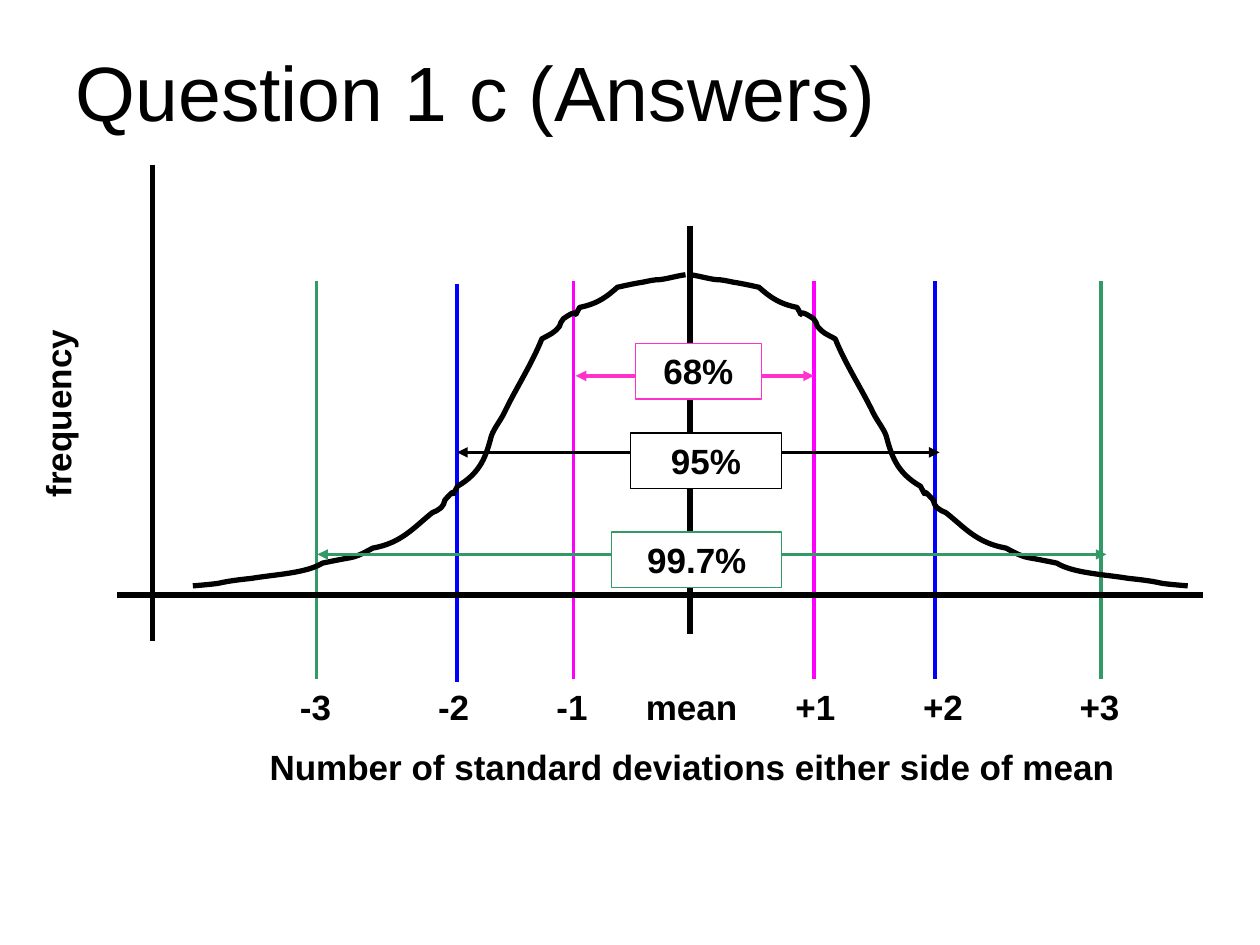
from itertools import chain

from lxml import etree
from pptx import Presentation
from pptx.dml.color import RGBColor
from pptx.enum import shapes, text
from pptx.oxml import ns
from pptx.util import Pt

COLORS = {"black": "000000", "white": "FFFFFF", "green": "339966",
          "blue": "0000FF", "magenta": "FF00FF", "pink": "FF33CC"}

# (x, top, bottom, colour) of the standard deviation markers
MARKERS = [(181, 160.6, 388, "green"), (327.6, 160.6, 388, "magenta"),
           (261.2, 162, 390, "blue"), (465.2, 160.6, 388, "magenta"),
           (534.2, 160.6, 388, "blue"), (629.3, 160.6, 388, "green")]

# (start, end, y, colour) of each arrow, then (text, box left, top, width)
RANGES = [((181.4, 632.2, 316.8, "green"), ("99.7%", 349.6, 304.1, 97.2)),
          ((329, 465.1, 214.8, "pink"), ("68%", 363.1, 196.4, 72)),
          ((261.2, 536.9, 258.5, "black"), ("95%", 360.2, 247.5, 86.4))]

TICKS = [("-3", 180.4), ("-2", 259.3), ("-1", 327), ("mean", 395.3),
         ("+1", 466), ("+2", 539), ("+3", 628.4)]

# Half bell: Bezier points as (distance from the mean, y)
BELL_START = (0, 157)
BELL_CURVES = [
    ((5, 157.7), (9.4, 159.1), (14.4, 159.8)),
    ((18, 159.8), (20.9, 160.6), (24.5, 161.3)),
    ((29.5, 162), (38.9, 164.2), (38.9, 164.2)),
    ((44.6, 169.2), (49.7, 173.5), (60.5, 175.7)),
    ((66.2, 185.8), (57.6, 173.5), (69.8, 182.2)),
    ((71.3, 183.6), (71.3, 185), (72, 186.5)),
    ((75.6, 190.8), (77, 190.8), (82.1, 193.7)),
    ((87.8, 208.1), (97.2, 222.5), (103.7, 236.2)),
    ((105.8, 240.5), (109.4, 244.8), (110.9, 249.1)),
    ((113.8, 259.9), (116.6, 270), (130.3, 277.9)),
    ((136.1, 288.7), (128.2, 275), (137.5, 285.8)),
    ((138.2, 287.3), (138.2, 289.4), (139.7, 290.2)),
    ((141.1, 291.6), (143.3, 292.3), (144.7, 293)),
    ((154.8, 301), (162, 310.3), (178.6, 313.2)),
    ((182.9, 315.4), (187.2, 318.2), (193, 319)),
    ((197.3, 319.7), (207.4, 321.8), (207.4, 321.8)),
    ((216.7, 327.6), (234.7, 328.3), (247.7, 330.5)),
    ((254.2, 331.2), (260.6, 331.9), (267.1, 333.4)),
    ((272.2, 334.1), (281.5, 334.8), (281.5, 334.8)),
]


def rgb(color):
    return RGBColor.from_string(COLORS[color])


def format_font(paragraph, size=20, bold=True):
    font = paragraph.font
    font.name, font.size, font.bold = "Arial", Pt(size), bold
    font.color.rgb = rgb("black")


def add_line(slide, start, end, color, width, arrows=False):
    line = slide.shapes.add_connector(shapes.MSO_CONNECTOR.STRAIGHT,
                                      *map(Pt, start + end))
    line.line.color.rgb = rgb(color)
    line.line.width = Pt(width)
    properties = line._element.spPr
    if arrows:
        outline = properties.find(ns.qn("a:ln"))
        for tag in ("a:headEnd", "a:tailEnd"):
            etree.SubElement(outline, ns.qn(tag), type="triangle")
    etree.SubElement(properties, ns.qn("a:effectLst"))


def segments_to_curves(shape):
    """Turn each three line segments of a freeform into one Bezier curve."""
    segments = list(shape._element.iter(ns.qn("a:lnTo")))
    for first in range(0, len(segments), 3):
        curve = segments[first]
        curve.tag = ns.qn("a:cubicBezTo")
        for segment in segments[first + 1:first + 3]:
            curve.append(segment[0])
            segment.getparent().remove(segment)


def add_half_bell(slide, origin, x_scale):
    """Draw one side of the bell; a negative scale points it left."""
    points = [(Pt(origin + x_scale * x), Pt(y))
              for x, y in chain([BELL_START], *BELL_CURVES)]
    builder = slide.shapes.build_freeform(*points[0])
    builder.add_line_segments(points[1:], close=False)
    curve = builder.convert_to_shape()
    segments_to_curves(curve)
    curve.shadow.inherit = False
    curve.fill.background()
    curve.line.color.rgb = rgb("black")
    curve.line.width = Pt(3)


def add_text_box(slide, lines, left, top, width, height):
    box = slide.shapes.add_textbox(*map(Pt, (left, top, width, height)))
    frame = box.text_frame
    frame.word_wrap = True
    for number, line in enumerate(lines):
        paragraph = frame.add_paragraph() if number else frame.paragraphs[0]
        paragraph.text = line
        format_font(paragraph)
    return box


def add_axis_labels(slide):
    left, inset = 69.1, 7.2
    line = "".join("\t" + label for label, _ in TICKS)
    caption = "Number of standard deviations either side of mean"
    box = add_text_box(slide, [line, caption], left, 388.1, 600, 67)
    ticks, title = box.text_frame.paragraphs
    stops = etree.Element(ns.qn("a:tabLst"))
    ticks._p.get_or_add_pPr().insert(0, stops)
    for _, center in TICKS:
        etree.SubElement(stops, ns.qn("a:tab"),
                         pos=str(Pt(center - left - inset)), algn="ctr")
    title.space_before = Pt(10.5)
    title._p.get_or_add_pPr().set("marL", str(Pt(77.8)))


def add_range_box(slide, label, left, top, width, color):
    box = slide.shapes.add_shape(shapes.MSO_SHAPE.RECTANGLE,
                                 *map(Pt, (left, top, width, 31.7)))
    box.shadow.inherit = False
    box.fill.solid()
    box.fill.fore_color.rgb = rgb("white")
    box.line.color.rgb = rgb(color)
    box.line.width = Pt(0.75)
    frame = box.text_frame
    frame.text = label
    frame.vertical_anchor = text.MSO_ANCHOR.TOP
    frame.paragraphs[0].alignment = text.PP_ALIGN.CENTER
    format_font(frame.paragraphs[0])


def set_title(slide, words):
    title = slide.shapes.title
    title.left, title.top, title.width, title.height = map(Pt, (36, 21.6, 648, 90))
    frame = title.text_frame
    frame.text = words
    frame.vertical_anchor = text.MSO_ANCHOR.TOP
    frame.paragraphs[0].alignment = text.PP_ALIGN.LEFT
    format_font(frame.paragraphs[0], 44, False)


def main():
    presentation = Presentation()
    presentation.slide_width, presentation.slide_height = Pt(720), Pt(540)
    slide = presentation.slides.add_slide(presentation.slide_layouts[5])
    set_title(slide, "Question 1 c (Answers)")
    add_axis_labels(slide)
    for x, top, bottom, color in MARKERS:
        add_line(slide, (x, top), (x, bottom), color, 2)
    add_line(slide, (67, 340), (687.6, 340), "black", 3)
    add_half_bell(slide, 391.7, -1)
    add_half_bell(slide, 394.4, 1.01)
    add_line(slide, (394.3, 128.9), (394.3, 362.2), "black", 3)
    add_line(slide, (87.1, 94.3), (87.1, 366.5), "black", 3)
    add_text_box(slide, ["frequency"], -47.5, 195.5, 160.6, 31).rotation = 270
    for (start, end, y, color), box in RANGES:
        add_line(slide, (start, y), (end, y), color, 2, arrows=True)
        add_range_box(slide, *box, color)
    presentation.save("out.pptx")


if __name__ == "__main__":
    main()
